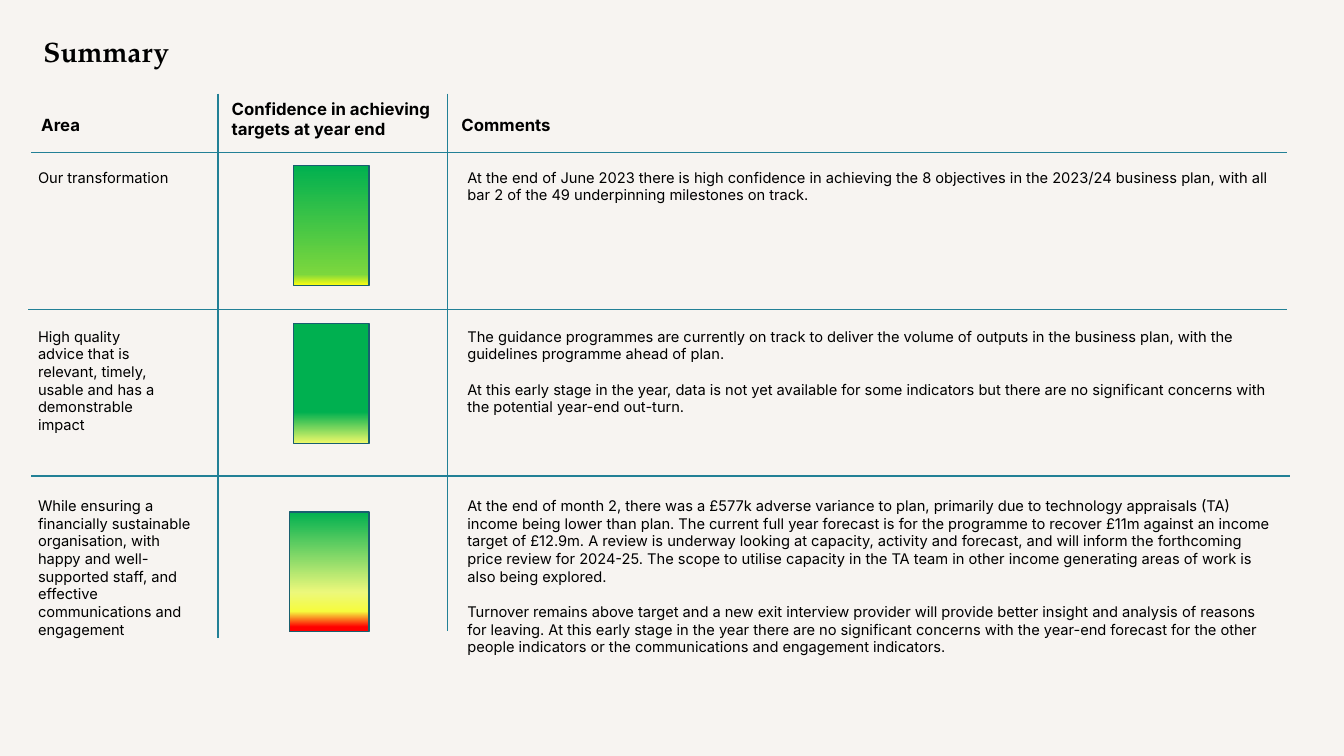
import pptx
import pptx.dml.color
import pptx.enum.shapes
import pptx.enum.text
import pptx.oxml
import pptx.oxml.ns
import pptx.util
import lxml.etree
from dataclasses import dataclass
from pptx.util import Cm


@dataclass(frozen=True)
class Theme:
    background: str = "F7F4F1"
    text: str = "000000"
    rule: str = "228096"
    outline: str = "195F6F"
    title_font: str = "TeX Gyre Pagella"
    body_font: str = "Inter"
    title_size: float = 20
    header_size: float = 12
    body_size: float = 10.5
    paragraph_gap: float = 12.7
    line_width: float = 1


THEME = Theme()
rgb = pptx.dml.color.RGBColor.from_string
qn = pptx.oxml.ns.qn


def add_text(left, top, width, height, paragraphs, size, bold=False):
    box = slide.shapes.add_textbox(Cm(left), Cm(top), Cm(width), Cm(height))
    frame = box.text_frame
    frame.word_wrap = True
    frame.text = "\n".join(paragraphs)
    for index, paragraph in enumerate(frame.paragraphs):
        paragraph.font.name = THEME.body_font
        paragraph.font.size = pptx.util.Pt(size)
        paragraph.font.bold = bold
        paragraph.font.color.rgb = rgb(THEME.text)
        if index:
            paragraph.space_before = pptx.util.Pt(THEME.paragraph_gap)


def add_confidence_bar(left, top, width, height, stops):
    """Draw a rectangle filled from top to bottom through (percent, colour) stops."""
    bar = slide.shapes.add_shape(
        pptx.enum.shapes.MSO_SHAPE.RECTANGLE, Cm(left), Cm(top), Cm(width), Cm(height))
    bar.shadow.inherit = False
    bar.line.color.rgb = rgb(THEME.outline)
    bar.line.width = pptx.util.Pt(THEME.line_width)
    bar.fill.gradient()
    bar.fill.gradient_angle = 270
    stop_list = bar._element.spPr.find(qn("a:gradFill")).find(qn("a:gsLst"))
    for old_stop in list(stop_list):
        stop_list.remove(old_stop)
    for percent, colour in stops:
        stop = lxml.etree.SubElement(stop_list, qn("a:gs"), pos=str(percent * 1000))
        lxml.etree.SubElement(stop, qn("a:srgbClr"), val=colour)


presentation = pptx.Presentation()
presentation.slide_width = Cm(33.87)
presentation.slide_height = Cm(19.05)
slide = presentation.slides.add_slide(presentation.slide_layouts[5])
slide.background.fill.solid()
slide.background.fill.fore_color.rgb = rgb(THEME.background)

# Title
title = slide.shapes.title
title.left, title.top, title.width, title.height = Cm(0.84), Cm(0.79), Cm(31.04), Cm(1.12)
title.text_frame.text = "Summary"
title.text_frame.vertical_anchor = pptx.enum.text.MSO_ANCHOR.MIDDLE
heading = title.text_frame.paragraphs[0]
heading.alignment = pptx.enum.text.PP_ALIGN.LEFT
heading.line_spacing = 0.9
heading.font.name = THEME.title_font
heading.font.size = pptx.util.Pt(THEME.title_size)
heading.font.bold = True
heading.font.color.rgb = rgb(THEME.text)

# Column headers: left, top, width, height, text
headers = [
    (0.79, 2.77, 3.23, 0.71, "Area"),
    (5.59, 2.36, 5.94, 1.02, "Confidence in achieving targets at year end"),
    (11.38, 2.77, 2.79, 0.58, "Comments"),
]
for left, top, width, height, text in headers:
    add_text(left, top, width, height, [text], THEME.header_size, bold=True)

# Rows: top, height, area, area width, bar (left, top, width), gradient stops, comments
rows = [
    (4.12, 1.14, "Our transformation", 3.99, (7.39, 4.17, 1.91),
     [(0, "00B050"), (91, "7CD73D"), (100, "FCFE12")],
     ["At the end of June 2023 there is high confidence in achieving the 8 objectives in "
      "the 2023/24 business plan, with all bar 2 of the 49 underpinning milestones on track."]),
    (8.13, 2.95, "High quality advice that is relevant, timely, usable and has a "
     "demonstrable impact", 3.71, (7.39, 8.15, 1.91),
     [(74, "00B050"), (100, "EEF969")],
     ["The guidance programmes are currently on track to deliver the volume of outputs in "
      "the business plan, with the guidelines programme ahead of plan.",
      "At this early stage in the year, data is not yet available for some indicators but "
      "there are no significant concerns with the potential year-end out-turn."]),
    (12.4, 4.75, "While ensuring a financially sustainable organisation, with happy and "
     "well-supported staff, and effective communications and engagement", 4.65,
     (7.29, 12.9, 2.01),
     [(0, "00B050"), (67, "ECF87B"), (83, "F6FC3E"), (96, "FF0000")],
     ["At the end of month 2, there was a £577k adverse variance to plan, primarily due to "
      "technology appraisals (TA) income being lower than plan. The current full year "
      "forecast is for the programme to recover £11m against an income target of £12.9m. A "
      "review is underway looking at capacity, activity and forecast, and will inform the "
      "forthcoming price review for 2024-25. The scope to utilise capacity in the TA team in "
      "other income generating areas of work is also being explored.",
      "Turnover remains above target and a new exit interview provider will provide better "
      "insight and analysis of reasons for leaving. At this early stage in the year there are "
      "no significant concerns with the year-end forecast for the other people indicators or "
      "the communications and engagement indicators."]),
]
for top, height, area, area_width, bar_place, stops, comments in rows:
    add_text(0.71, top, area_width, height, [area], THEME.body_size)
    add_confidence_bar(*bar_place, 3.02, stops)
    add_text(11.53, top, 20.78, height, comments, THEME.body_size)

# Rules between rows and columns: start x, start y, end x, end y
rules = [
    (0.79, 3.84, 32.44, 3.84),
    (0.79, 11.99, 32.51, 11.99),
    (0.71, 7.8, 32.44, 7.8),
    (5.49, 2.36, 5.49, 16.08),
    (11.28, 2.36, 11.28, 15.9),
]
for ends in rules:
    rule = slide.shapes.add_connector(
        pptx.enum.shapes.MSO_CONNECTOR.STRAIGHT, *(Cm(value) for value in ends))
    rule.line.color.rgb = rgb(THEME.rule)
    rule.line.width = pptx.util.Pt(THEME.line_width)
    lxml.etree.SubElement(rule._element.spPr, qn("a:effectLst"))

presentation.save("out.pptx")
